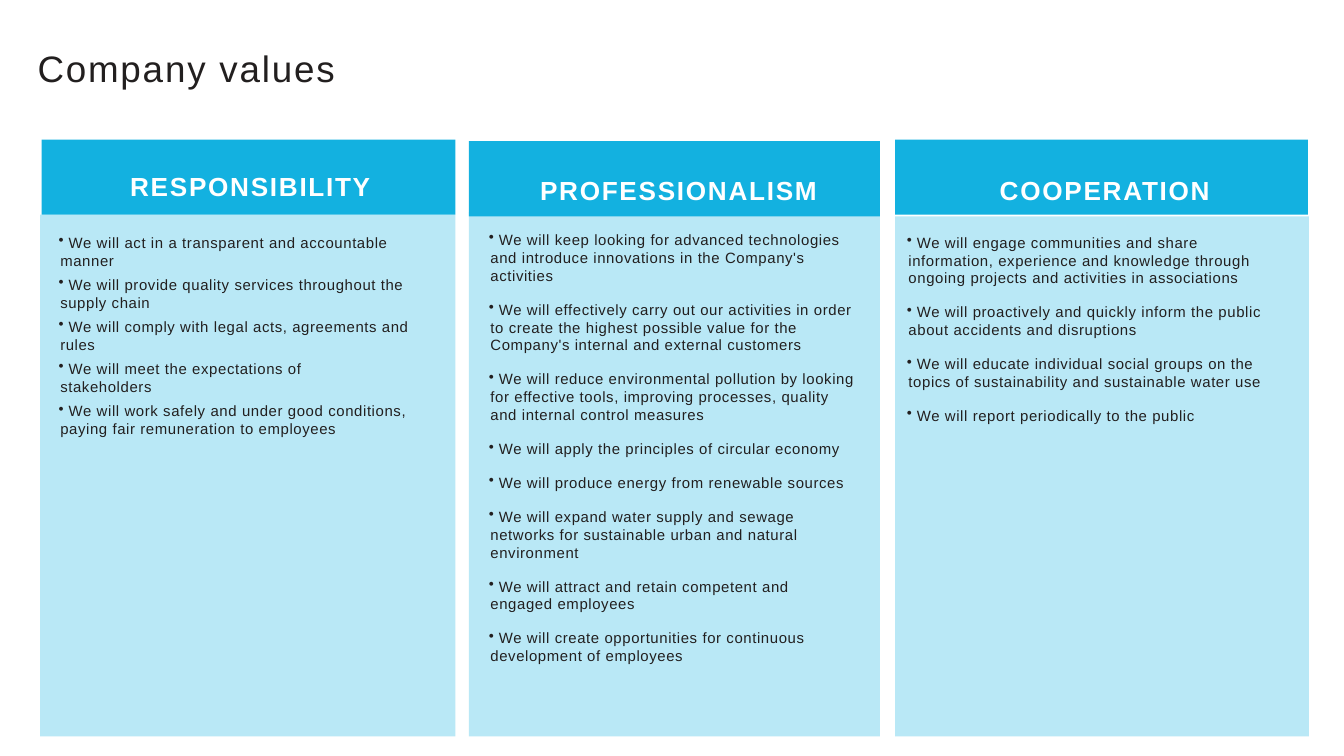
import pptx
import pptx.dml.color
import pptx.enum.shapes
import pptx.enum.text
import pptx.util
from lxml import etree
from pptx.oxml.ns import qn

Cm, Pt = pptx.util.Cm, pptx.util.Pt
LEFT = pptx.enum.text.PP_ALIGN.LEFT
CENTER = pptx.enum.text.PP_ALIGN.CENTER

FONT = "Arial"
DARK, WHITE, BLUE, PALE = "221F1F", "FFFFFF", "13B1E0", "B9E8F6"
HEADER_HEIGHT = 1.42
PANEL_BOTTOM = 13.92

TITLE = "Company values"

# Boxes are left, top, width, height in cm; a panel or header has no height of
# its own. "right" holds the right indent of each bullet.
COLUMNS = [
    {
        "heading": "RESPONSIBILITY", "align": LEFT, "indent": 0.56,
        "panel": (0.76, 4.06, 7.85), "header": (0.79, 2.64, 7.82),
        "label": (1.9, 2.79, 5.51, 1.04), "text": (0.84, 4.11, 7.59, 3.96),
        "spacing": 3.4, "right": [0.38, 0.38, 0.38, 1.3, 0.38],
        "bullets": [
            "We will act in a transparent and accountable manner",
            "We will provide quality services throughout the supply chain",
            "We will comply with legal acts, agreements and rules",
            "We will meet the expectations of stakeholders",
            "We will work safely and under good conditions, paying fair remuneration to employees",
        ],
    },
    {
        "heading": "PROFESSIONALISM", "align": CENTER, "indent": 0.15,
        "panel": (8.86, 4.01, 7.77), "header": (8.86, 2.67, 7.77),
        "label": (9.12, 2.87, 7.26, 1.02), "text": (8.97, 4.06, 7.95, 8.03),
        "spacing": 8.6, "right": [0.76] * 8,
        "bullets": [
            "We will keep looking for advanced technologies and introduce innovations in the Company's activities",
            "We will effectively carry out our activities in order to create the highest possible value for the Company's internal and external customers",
            "We will reduce environmental pollution by looking for effective tools, improving processes, quality and internal control measures",
            "We will apply the principles of circular economy",
            "We will produce energy from renewable sources",
            "We will expand water supply and sewage networks for sustainable urban and natural environment",
            "We will attract and retain competent and engaged employees",
            "We will create opportunities for continuous development of employees",
        ],
    },
    {
        "heading": "COOPERATION", "align": CENTER, "indent": 0.15,
        "panel": (16.92, 4.09, 7.82), "header": (16.92, 2.64, 7.8),
        "label": (17.53, 2.87, 6.55, 1.02), "text": (16.87, 4.11, 7.87, 4.01),
        "spacing": 8.6, "right": [0.76] * 4,
        "bullets": [
            "We will engage communities and share information, experience and knowledge through ongoing projects and activities in associations",
            "We will proactively and quickly inform the public about accidents and disruptions",
            "We will educate individual social groups on the topics of sustainability and sustainable water use",
            "We will report periodically to the public",
        ],
    },
]


def color(value):
    return pptx.dml.color.RGBColor.from_string(value)


def add_rectangle(slide, box, fill):
    shape = slide.shapes.add_shape(
        pptx.enum.shapes.MSO_SHAPE.RECTANGLE, *map(Cm, box))
    shape.shadow.inherit = False
    shape.fill.solid()
    shape.fill.fore_color.rgb = color(fill)
    shape.line.fill.background()
    return shape


def prepare_frame(shape, top_inset):
    frame = shape.text_frame
    frame.word_wrap = True
    frame.vertical_anchor = pptx.enum.text.MSO_ANCHOR.TOP
    frame.margin_left = frame.margin_right = frame.margin_bottom = 0
    frame.margin_top = Cm(top_inset)
    return frame


def write(paragraph, text, size, text_color, tracking, before, indent,
          align=LEFT, bold=False):
    """Fill a paragraph; tracking is letter spacing in points."""
    paragraph.alignment = align
    paragraph.space_before = Pt(before)
    paragraph._p.get_or_add_pPr().set("marL", str(Cm(indent)))
    run = paragraph.add_run()
    run.text = text
    run.font.name = FONT
    run.font.size = Pt(size)
    run.font.bold = bold
    run.font.color.rgb = color(text_color)
    run._r.get_or_add_rPr().set("spc", str(round(tracking * 100)))


def add_bullet(paragraph, right):
    properties = paragraph._p.get_or_add_pPr()
    properties.set("marR", str(Cm(right)))
    properties.set("indent", str(Cm(-0.03)))
    etree.SubElement(properties, qn("a:buChar")).set("char", "•")


def add_text_column(slide, column):
    frame = prepare_frame(slide.shapes.add_textbox(*map(Cm, column["text"])), 0.3)
    for index, (text, right) in enumerate(zip(column["bullets"], column["right"])):
        paragraph = frame.add_paragraph() if index else frame.paragraphs[0]
        before = column["spacing"] if index else 8.6
        write(paragraph, " " + text, 8, DARK, 0.3, before, 0.3)
        add_bullet(paragraph, right)


def add_label(slide, column):
    frame = prepare_frame(add_rectangle(slide, column["label"], BLUE), 0.43)
    write(frame.paragraphs[0], column["heading"], 14, WHITE, 0.9, 12,
          column["indent"], column["align"], bold=True)


def main():
    presentation = pptx.Presentation()
    presentation.slide_width = Cm(25.4)
    presentation.slide_height = Cm(14.29)
    slide = presentation.slides.add_slide(presentation.slide_layouts[6])

    title = slide.shapes.add_textbox(Cm(0.58), Cm(0.61), Cm(16.28), Cm(1.09))
    write(prepare_frame(title, 0.25).paragraphs[0], TITLE, 19.7, DARK, 1, 0.6, 0.13)

    for column in COLUMNS:
        panel_height = PANEL_BOTTOM - column["panel"][1]
        add_rectangle(slide, (*column["panel"], panel_height), PALE)
        add_rectangle(slide, (*column["header"], HEADER_HEIGHT), BLUE)
        add_text_column(slide, column)
        add_label(slide, column)

    presentation.save("out.pptx")


if __name__ == "__main__":
    main()
